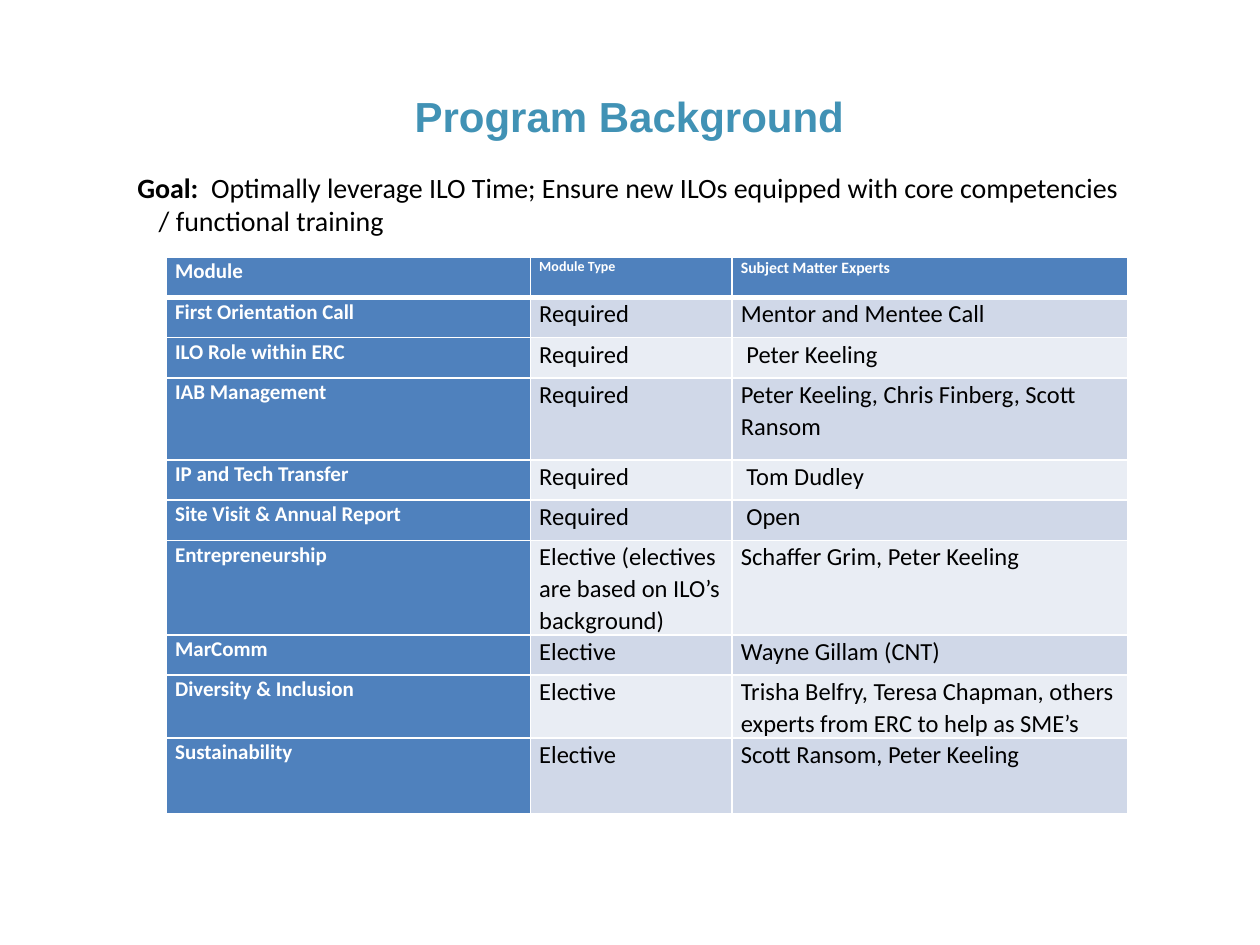
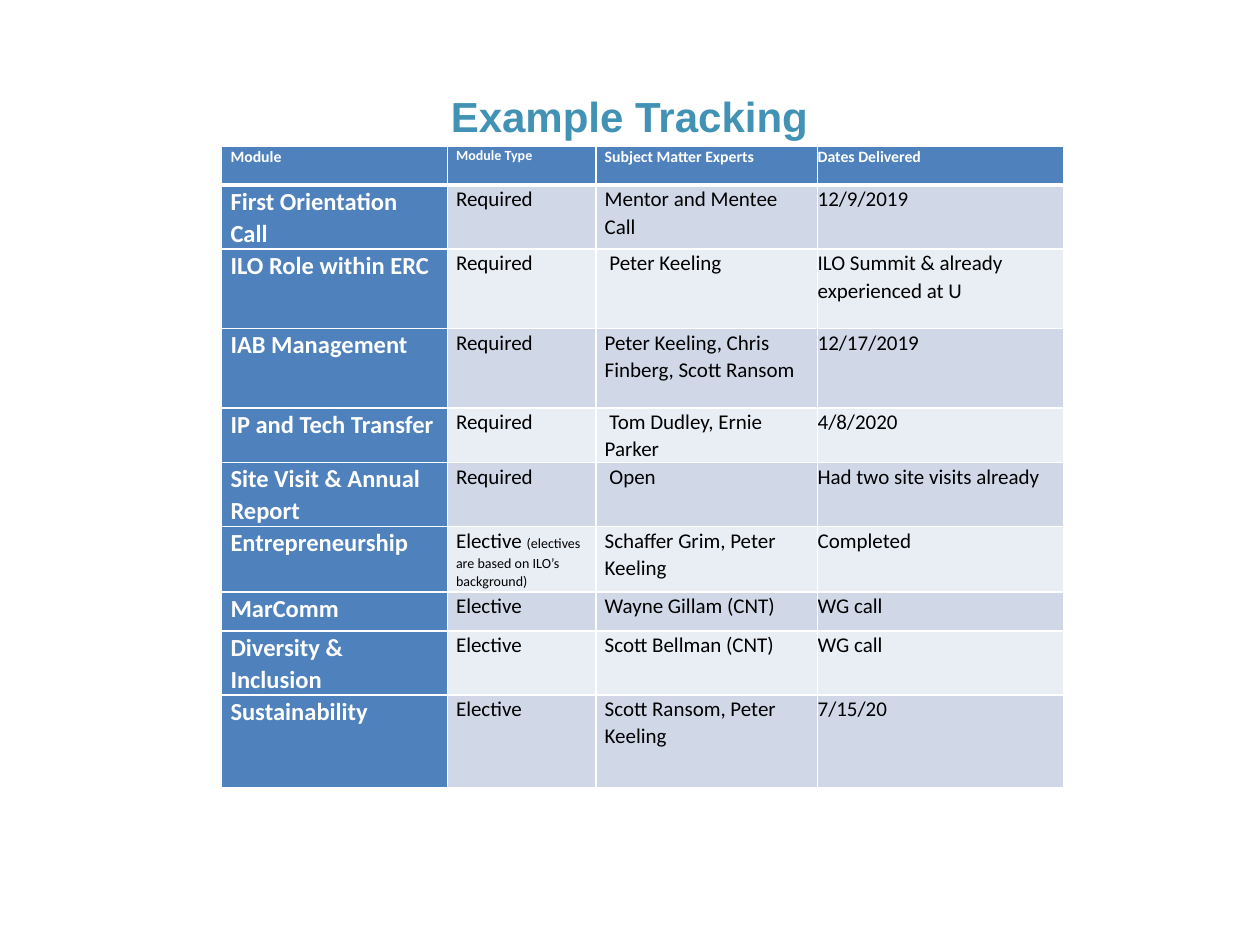
from pptx import Presentation
from pptx.dml.color import RGBColor
from pptx.enum.text import MSO_ANCHOR, MSO_AUTO_SIZE, PP_ALIGN
from pptx.oxml.ns import qn
from pptx.util import Inches, Pt
from lxml import etree

TOP = MSO_ANCHOR.TOP
NO_FIT = MSO_AUTO_SIZE.NONE
CENTER = PP_ALIGN.CENTER
TITLE_ONLY = 5
TITLE_FONT = "Arial"
BODY_FONT = "Calibri"
COLORS = {
    "title": "4192B5",
    "text": "000000",
    "white": "FFFFFF",
    "accent": "4F81BD",
    "odd_band": "D0D8E8",
    "even_band": "E9EDF4",
}

HEADERS = ["Module", "Module Type", "Subject Matter Experts", "Dates Delivered"]
MODULES = [
    "First Orientation Call", "ILO Role within ERC", "IAB Management",
    "IP and Tech Transfer", "Site Visit & Annual Report", "Entrepreneurship",
    "MarComm", "Diversity & Inclusion", "Sustainability",
]
REQUIRED_COUNT = 5
ELECTIVE_NOTES = {"Entrepreneurship": "(electives are based on ILO’s background)"}
PROGRAM_EXPERTS = [
    "Mentor and Mentee Call", " Peter Keeling",
    "Peter Keeling, Chris Finberg, Scott Ransom", " Tom Dudley", " Open",
    "Schaffer Grim, Peter Keeling", "Wayne Gillam (CNT)",
    "Trisha Belfry, Teresa Chapman, others experts from ERC to help as SME’s",
    "Scott Ransom, Peter Keeling",
]
TRACKING_EXPERTS = list(PROGRAM_EXPERTS)
TRACKING_EXPERTS[3] = " Tom Dudley, Ernie Parker"
TRACKING_EXPERTS[7] = "Scott Bellman (CNT)"
DATES_DELIVERED = [
    "12/9/2019", "ILO Summit & already experienced at U", "12/17/2019",
    "4/8/2020", "Had two site visits already", "Completed", "WG call",
    "WG call", "7/15/20",
]


def add_run(paragraph, text, size, color, bold=False, font=BODY_FONT):
    run = paragraph.add_run()
    run.text = text
    run.font.name = font
    run.font.size = Pt(size)
    run.font.bold = bold
    run.font.color.rgb = RGBColor.from_string(COLORS[color])


def add_titled_slide(presentation, text):
    slide = presentation.slides.add_slide(presentation.slide_layouts[TITLE_ONLY])
    title = slide.shapes.title
    title.left, title.top = Inches(0.87), Inches(0.59)
    title.width, title.height = Inches(8.25), Inches(0.54)
    frame = title.text_frame
    frame.auto_size = NO_FIT
    frame.vertical_anchor = TOP
    paragraph = frame.paragraphs[0]
    paragraph.alignment = CENTER
    paragraph.line_spacing = 1.2
    add_run(paragraph, text, 24, "title", True, TITLE_FONT)
    return slide


def add_goal(slide, label, text):
    box = slide.shapes.add_textbox(Inches(0.95), Inches(1.28), Inches(8.1), Inches(0.68))
    frame = box.text_frame
    frame.word_wrap = True
    frame.margin_left = frame.margin_right = Inches(0.14)
    frame.margin_top = frame.margin_bottom = Inches(0.07)
    paragraph = frame.paragraphs[0]
    properties = paragraph._p.get_or_add_pPr()
    properties.set("marL", str(Inches(0.17)))
    properties.set("indent", str(-Inches(0.17)))
    add_run(paragraph, label, 16, "text", True)
    add_run(paragraph, text, 16, "text")


def set_border(cell, side, width):
    line = etree.SubElement(cell._tc.get_or_add_tcPr(), qn(f"a:ln{side}"), w=str(Pt(width)))
    fill = etree.SubElement(line, qn("a:solidFill"))
    etree.SubElement(fill, qn("a:srgbClr"), val=COLORS["white"])


def fill_cell(cell, runs, row, column):
    heading = row == 0 or column == 0
    margin = Inches(0 if column == 3 else 0.07)
    cell.margin_left = cell.margin_right = margin
    cell.margin_top = cell.margin_bottom = 0
    for side in "LRTB":
        thick = (row, side) in ((0, "B"), (1, "T"))
        set_border(cell, side, 3 if thick else 1)
    band = "accent" if heading else "odd_band" if row % 2 else "even_band"
    cell.fill.solid()
    cell.fill.fore_color.rgb = RGBColor.from_string(COLORS[band])
    paragraph = cell.text_frame.paragraphs[0]
    paragraph.line_spacing = 1.07
    paragraph.space_after = Pt(8)
    for text, size in runs:
        add_run(paragraph, text, size, "white" if heading else "text", heading)


def module_rows(detail_columns, header_sizes, module_size, body_size, note_size):
    rows = [[[pair] for pair in zip(HEADERS, header_sizes)]]
    for index, (module, *details) in enumerate(zip(MODULES, *detail_columns)):
        kind = "Required" if index < REQUIRED_COUNT else "Elective"
        kind_runs = [(kind, body_size)]
        if module in ELECTIVE_NOTES:
            kind_runs = [(kind + " ", body_size), (ELECTIVE_NOTES[module], note_size)]
        rows.append([[(module, module_size)], kind_runs]
                    + [[(detail, body_size)] for detail in details])
    return rows


def add_module_table(slide, left, top, widths, heights, rows):
    frame = slide.shapes.add_table(len(heights), len(widths), Inches(left), Inches(top),
                                   Inches(sum(widths)), Inches(sum(heights)))
    table = frame.table
    table.horz_banding = False
    for column, width in zip(table.columns, widths):
        column.width = Inches(width)
    for row, height in zip(table.rows, heights):
        row.height = Inches(height)
    for row_index, row in enumerate(rows):
        for column_index, runs in enumerate(row):
            fill_cell(table.cell(row_index, column_index), runs, row_index, column_index)


def main():
    presentation = Presentation()
    presentation.slide_width, presentation.slide_height = Inches(10), Inches(7.5)

    slide = add_titled_slide(presentation, "Program Background")
    add_goal(slide, "Goal:  ", "Optimally leverage ILO Time; Ensure new ILOs equipped "
             "with core competencies / functional training")
    add_module_table(
        slide, 1.32, 2.04, [2.89, 1.6, 3.14],
        [0.32, 0.32, 0.32, 0.65, 0.32, 0.32, 0.74, 0.32, 0.5, 0.6],
        module_rows([PROGRAM_EXPERTS], [12, 8, 9], 12, 14, 14))

    slide = add_titled_slide(presentation, "Example Tracking")
    add_module_table(
        slide, 1.76, 1.16, [1.79, 1.18, 1.76, 1.95],
        [0.31, 0.5, 0.63, 0.63, 0.43, 0.5, 0.52, 0.31, 0.5, 0.74],
        module_rows([TRACKING_EXPERTS, DATES_DELIVERED], [9, 8, 9, 9], 14, 12, 8))

    presentation.save("out.pptx")


if __name__ == "__main__":
    main()
